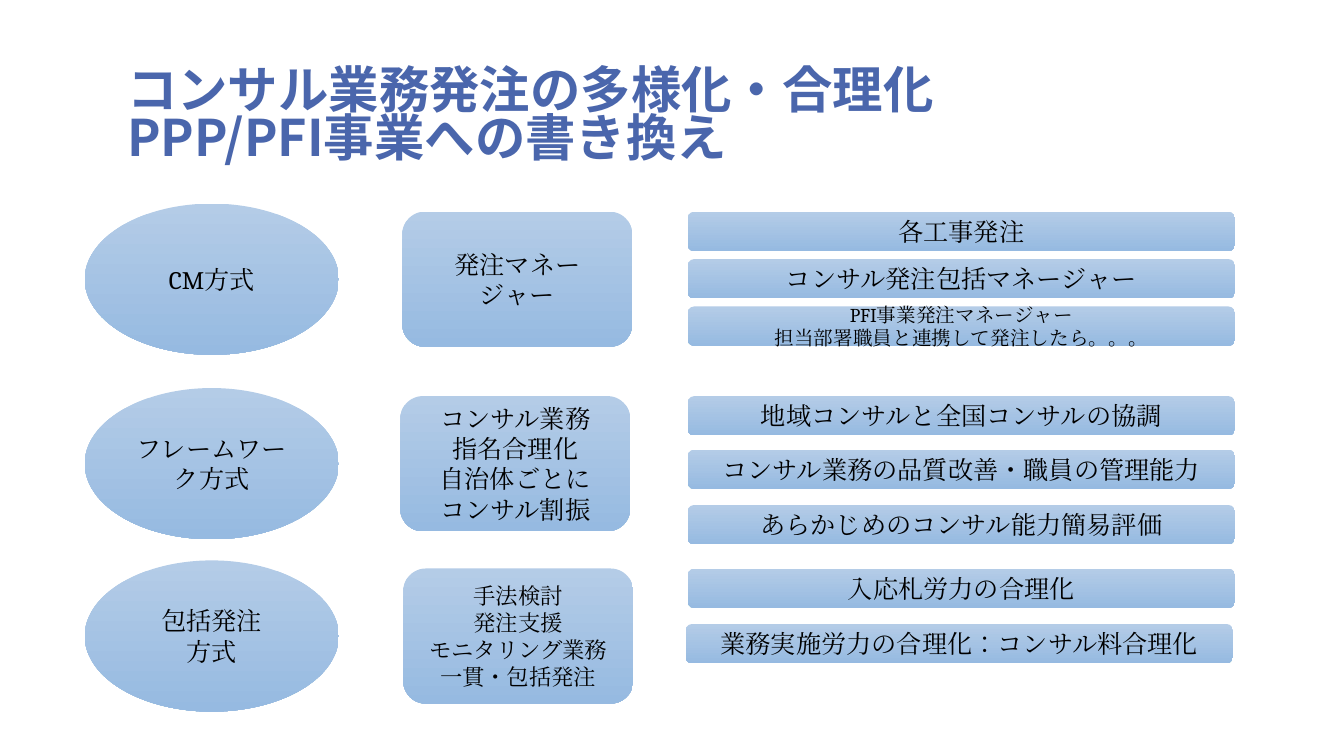
from dataclasses import dataclass

from lxml import etree
from pptx import Presentation
from pptx import util as u
from pptx.dml.color import RGBColor
from pptx.enum import lang, shapes, text
from pptx.oxml import ns

PX = u.Inches(1) // 100
TITLE_BLUE = RGBColor(0x4A, 0x66, 0xAC)
LIGHT_BLUE = RGBColor(0xB4, 0xCC, 0xE7)
MID_BLUE = RGBColor(0x96, 0xBA, 0xE1)
BLACK = RGBColor(0, 0, 0)
TITLE_FONT = "Noto Sans CJK JP"
BODY_FONT = "Cambria"
OVAL = shapes.MSO_SHAPE.OVAL
ROUNDED = shapes.MSO_SHAPE.ROUNDED_RECTANGLE


@dataclass(frozen=True)
class Bar:
    left: int
    top: int
    label: str
    size: int = 18


@dataclass(frozen=True)
class Method:
    top: int
    name: str
    role_left: int
    role: str
    role_size: int
    bars: tuple[Bar, ...]


METHODS = (
    Method(202, "CM方式", 399, "発注マネージャー", 18, (
        Bar(682, 210, "各工事発注"),
        Bar(682, 257, "コンサル発注包括マネージャー"),
        Bar(682, 304, "PFI事業発注マネージャー\n担当部署職員と連携して発注したら。。。", 14),
    )),
    Method(385, "フレームワーク方式", 397,
           "コンサル業務\n指名合理化\n自治体ごとに\nコンサル割振", 18, (
               Bar(682, 393, "地域コンサルと全国コンサルの協調"),
               Bar(682, 446, "コンサル業務の品質改善・職員の管理能力"),
               Bar(682, 501, "あらかじめのコンサル能力簡易評価"),
           )),
    Method(556, "包括発注\n方式", 400,
           "手法検討\n発注支援\nモニタリング業務\n一貫・包括発注", 16, (
               Bar(682, 564, "入応札労力の合理化"),
               Bar(680, 619, "業務実施労力の合理化：コンサル料合理化"),
           )),
)


def px(n: int) -> u.Emu:
    return u.Emu(n * PX)


def format_run(r, font: str, size: int, color: RGBColor, bold: bool) -> None:
    r.font.size = u.Pt(size)
    r.font.bold = bold
    r.font.color.rgb = color
    r.font.name = font
    r.font.language_id = lang.MSO_LANGUAGE_ID.JAPANESE
    latin = r.font._element.find(ns.qn("a:latin"))
    ea = etree.Element(ns.qn("a:ea"), typeface=font)
    latin.addnext(ea)


def add_box(s, kind, left: int, top: int, width: int, height: int,
            label: str, size: int) -> None:
    sp = s.shapes.add_shape(kind, px(left), px(top), px(width), px(height))
    sp.shadow.inherit = False
    sp.line.fill.background()
    sp.fill.gradient()
    sp.fill.gradient_angle = 270
    for stop, color in zip(sp.fill.gradient_stops, (LIGHT_BLUE, MID_BLUE)):
        stop.color.rgb = color
    tf = sp.text_frame
    tf.word_wrap = True
    tf.vertical_anchor = text.MSO_ANCHOR.MIDDLE
    tf.text = label
    for p in tf.paragraphs:
        p.alignment = text.PP_ALIGN.CENTER
        for r in p.runs:
            format_run(r, BODY_FONT, size, BLACK, False)


def add_title(s) -> None:
    sp = s.shapes.title
    sp.left, sp.top, sp.width, sp.height = px(116), px(58), px(950), px(112)
    tf = sp.text_frame
    tf.word_wrap = True
    tf.auto_size = text.MSO_AUTO_SIZE.NONE
    tf.vertical_anchor = text.MSO_ANCHOR.BOTTOM
    p = tf.paragraphs[0]
    p.text = "コンサル業務発注の多様化・合理化\vPPP/PFI事業への書き換え"
    p.alignment = text.PP_ALIGN.LEFT
    p.line_spacing = 0.8
    for r in p.runs:
        format_run(r, TITLE_FONT, 36, TITLE_BLUE, True)


def add_method(s, method: Method) -> None:
    add_box(s, OVAL, 84, method.top, 252, 150, method.name, 18)
    add_box(s, ROUNDED, method.role_left, method.top + 8, 228, 134,
            method.role, method.role_size)
    for bar in method.bars:
        add_box(s, ROUNDED, bar.left, bar.top, 543, 39, bar.label, bar.size)


def main() -> None:
    prs = Presentation()
    prs.slide_width, prs.slide_height = px(1333), px(750)
    s = prs.slides.add_slide(prs.slide_layouts[5])
    add_title(s)
    for method in METHODS:
        add_method(s, method)
    prs.save("out.pptx")


if __name__ == "__main__":
    main()
